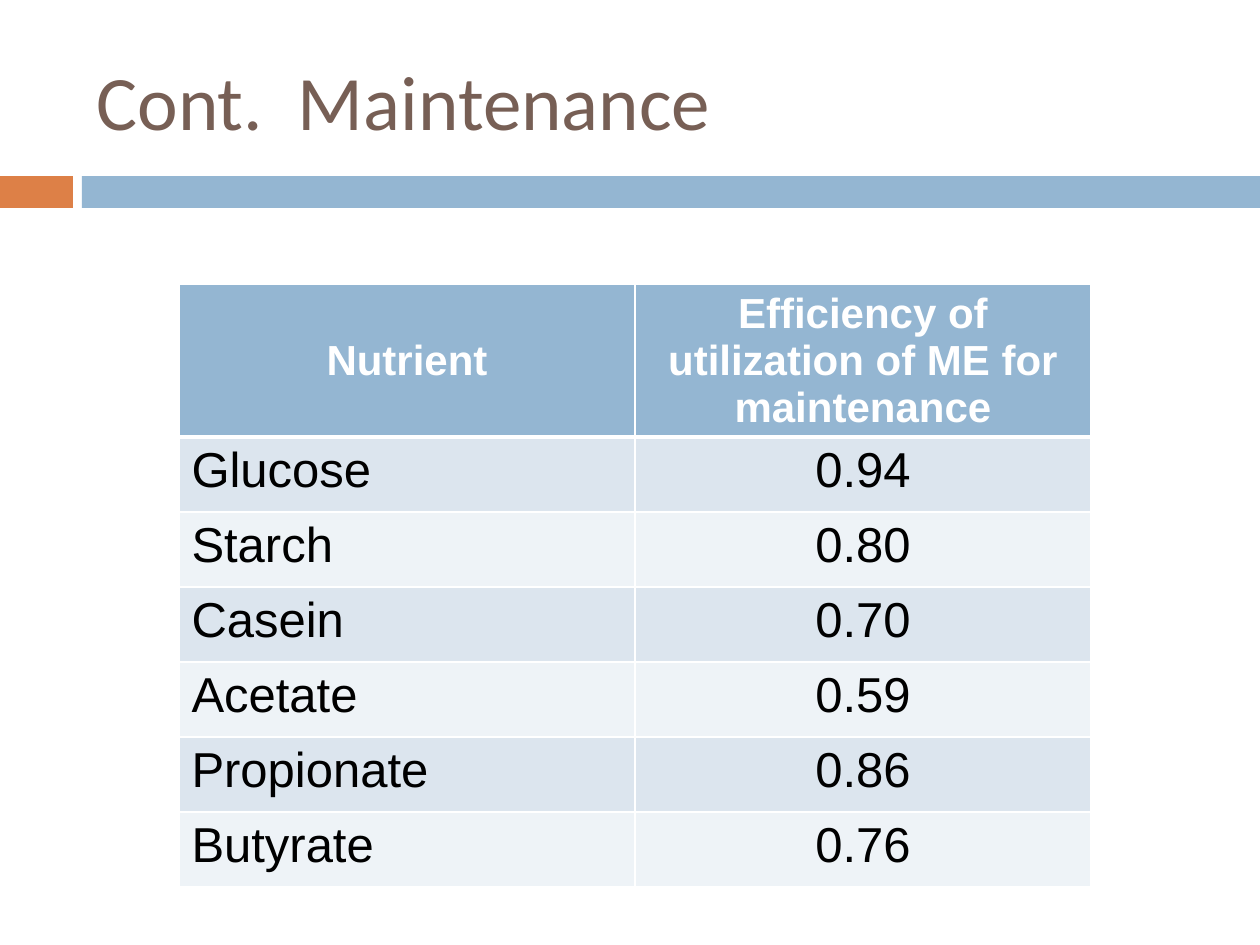
from dataclasses import dataclass

from lxml import etree
from pptx import Presentation
from pptx import util as u
from pptx.dml.color import RGBColor
from pptx.enum import shapes, text
from pptx.oxml import ns

EMU_PER_PX = 914400 / 126
TITLE_ONLY = 5


@dataclass(frozen=True)
class Theme:
    blue: str = "94B6D2"
    orange: str = "DD8047"
    brown: str = "775F55"
    white: str = "FFFFFF"
    black: str = "000000"
    bands: tuple[str, str] = ("DCE5EE", "EEF3F7")
    title_font: str = "Calibri"
    table_font: str = "Arial"
    title_size: int = 44
    header_size: int = 24
    body_size: int = 28


@dataclass(frozen=True)
class Box:
    left: int
    top: int
    width: int
    height: int

    def emu(self) -> tuple[int, int, int, int]:
        return px(self.left), px(self.top), px(self.width), px(self.height)


@dataclass(frozen=True)
class TextStyle:
    font: str
    size: int
    color: str
    bold: bool = False


@dataclass(frozen=True)
class Bar:
    box: Box
    color: str


@dataclass(frozen=True)
class Nutrient:
    name: str
    efficiency: str


THEME = Theme()
TITLE_STYLE = TextStyle(THEME.title_font, THEME.title_size, THEME.brown)
HEADER_STYLE = TextStyle(THEME.table_font, THEME.header_size, THEME.white, True)
BODY_STYLE = TextStyle(THEME.table_font, THEME.body_size, THEME.black)

TITLE_BOX = Box(84, 32, 1124, 136)
BARS = (
    Bar(Box(0, 176, 73, 32), THEME.orange),
    Bar(Box(82, 176, 1178, 32), THEME.blue),
)
HEADER_HEIGHT, ROW_HEIGHT = 151, 75
HEADERS = ("Nutrient", "Efficiency of utilization of ME for maintenance")
NUTRIENTS = (
    Nutrient("Glucose", "0.94"),
    Nutrient("Starch", "0.80"),
    Nutrient("Casein", "0.70"),
    Nutrient("Acetate", "0.59"),
    Nutrient("Propionate", "0.86"),
    Nutrient("Butyrate", "0.76"),
)
TABLE_BOX = Box(179, 284, 912, HEADER_HEIGHT + ROW_HEIGHT * len(NUTRIENTS))


def px(length: int) -> int:
    return round(length * EMU_PER_PX)


def write(frame, content: str, style: TextStyle, align) -> None:
    paragraph = frame.paragraphs[0]
    paragraph.alignment = align
    run = paragraph.add_run()
    run.text = content
    run.font.name = style.font
    run.font.size = u.Pt(style.size)
    run.font.bold = style.bold
    run.font.color.rgb = RGBColor.from_string(style.color)


def draw_title(slide, content: str) -> None:
    title = slide.shapes.title
    title.left, title.top, title.width, title.height = TITLE_BOX.emu()
    title.text_frame.word_wrap = True
    title.text_frame.vertical_anchor = text.MSO_ANCHOR.MIDDLE
    write(title.text_frame, content, TITLE_STYLE, text.PP_ALIGN.LEFT)


def draw_bar(slide, bar: Bar) -> None:
    shape = slide.shapes.add_shape(shapes.MSO_SHAPE.RECTANGLE, *bar.box.emu())
    shape.shadow.inherit = False
    shape.fill.solid()
    shape.fill.fore_color.rgb = RGBColor.from_string(bar.color)
    shape.line.fill.background()


def set_borders(cell, top: int, bottom: int) -> None:
    """Give the cell white borders, with widths in points (sides are 1)."""
    properties = cell._tc.get_or_add_tcPr()
    widths = {"lnL": 1, "lnR": 1, "lnT": top, "lnB": bottom}
    for index, (tag, width) in enumerate(widths.items()):
        line = etree.Element(ns.qn(f"a:{tag}"), w=str(u.Pt(width)))
        fill = etree.SubElement(line, ns.qn("a:solidFill"))
        etree.SubElement(fill, ns.qn("a:srgbClr"), val=THEME.white)
        properties.insert(index, line)


def draw_cell(cell, content: str, style: TextStyle, align, fill: str,
              top: int = 1, bottom: int = 1) -> None:
    cell.fill.solid()
    cell.fill.fore_color.rgb = RGBColor.from_string(fill)
    set_borders(cell, top, bottom)
    write(cell.text_frame, content, style, align)


def draw_table(slide) -> None:
    table = slide.shapes.add_table(
        len(NUTRIENTS) + 1, len(HEADERS), *TABLE_BOX.emu()).table
    for column in table.columns:
        column.width = px(TABLE_BOX.width // len(HEADERS))
    for index, row in enumerate(table.rows):
        row.height = px(ROW_HEIGHT if index else HEADER_HEIGHT)

    center, left = text.PP_ALIGN.CENTER, text.PP_ALIGN.LEFT
    for column, header in enumerate(HEADERS):
        cell = table.cell(0, column)
        cell.vertical_anchor = text.MSO_ANCHOR.MIDDLE
        draw_cell(cell, header, HEADER_STYLE, center, THEME.blue, bottom=3)
    for index, nutrient in enumerate(NUTRIENTS):
        band = THEME.bands[index % 2]
        top = 1 if index else 3
        draw_cell(table.cell(index + 1, 0), nutrient.name, BODY_STYLE, left, band, top)
        draw_cell(table.cell(index + 1, 1), nutrient.efficiency, BODY_STYLE, center, band, top)


def main() -> None:
    presentation = Presentation()
    presentation.slide_width, presentation.slide_height = px(1260), px(945)
    slide = presentation.slides.add_slide(presentation.slide_layouts[TITLE_ONLY])
    for bar in BARS:
        draw_bar(slide, bar)
    draw_title(slide, "Cont.  Maintenance")
    draw_table(slide)
    presentation.save("out.pptx")


if __name__ == "__main__":
    main()
